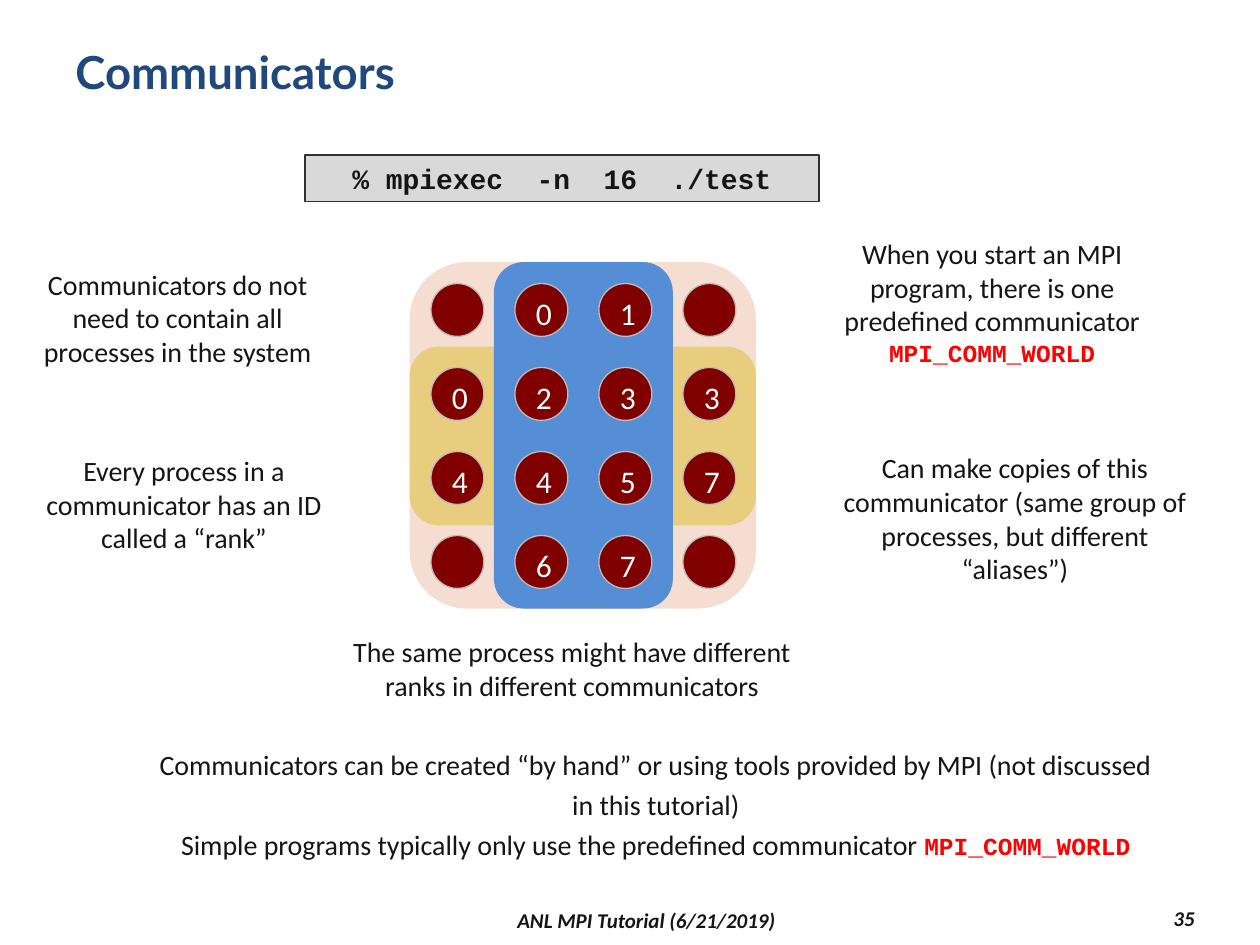
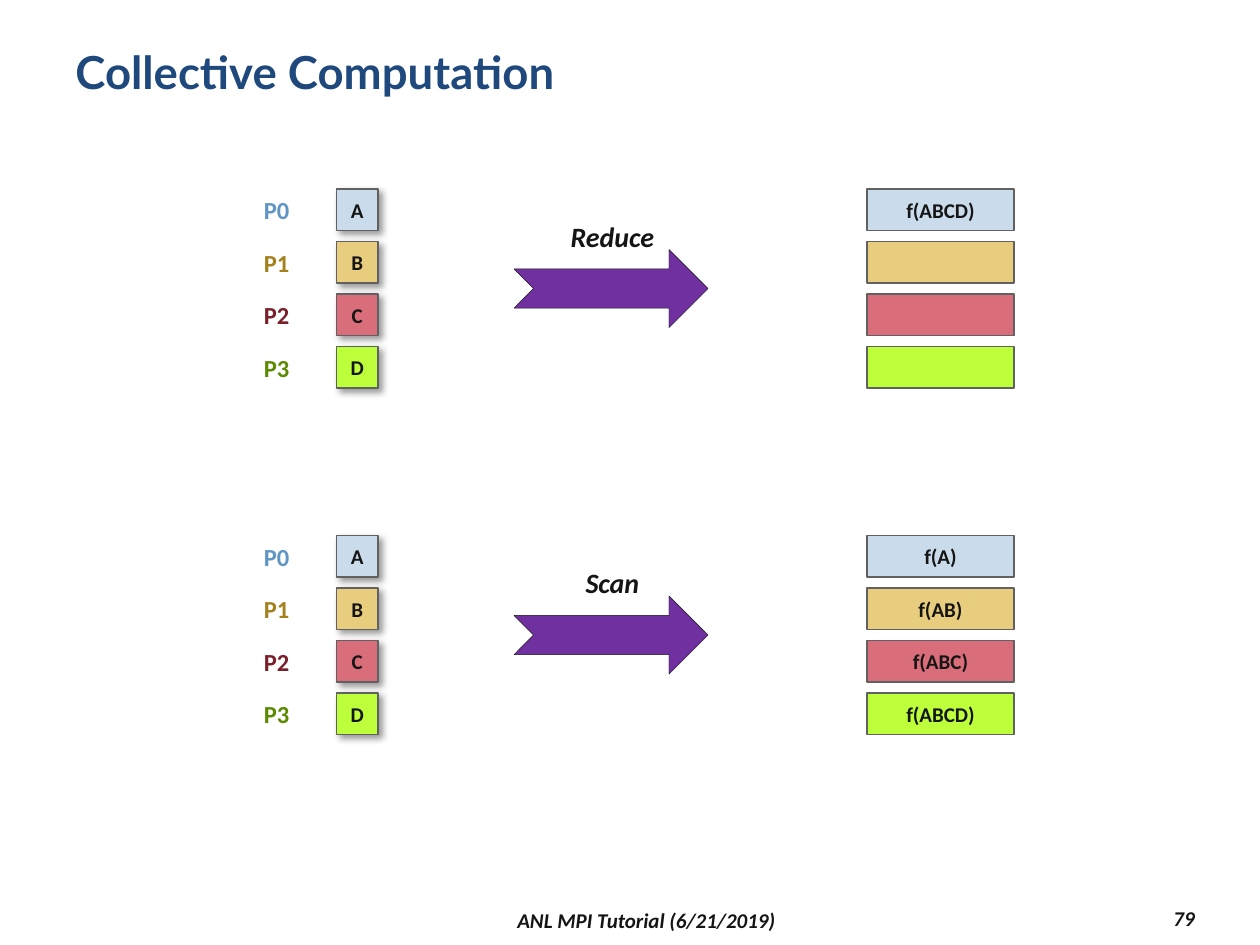
from pptx import Presentation
from pptx.dml.color import RGBColor
from pptx.enum.shapes import MSO_SHAPE
from pptx.enum.text import MSO_ANCHOR, MSO_AUTO_SIZE, PP_ALIGN
from pptx.oxml import parse_xml
from pptx.oxml.ns import nsdecls, qn
from pptx.util import Inches, Pt

RECT, ROUND = MSO_SHAPE.RECTANGLE, MSO_SHAPE.ROUNDED_RECTANGLE
OVAL, ARROW = MSO_SHAPE.OVAL, MSO_SHAPE.NOTCHED_RIGHT_ARROW
TOP, MID = MSO_ANCHOR.TOP, MSO_ANCHOR.MIDDLE
LEFT, MIDDLE, RIGHT = PP_ALIGN.LEFT, PP_ALIGN.CENTER, PP_ALIGN.RIGHT
GROW = MSO_AUTO_SIZE.SHAPE_TO_FIT_TEXT

COLORS = {
    "ink": "151515", "title": "1F497D", "white": "FFFFFF", "red": "FF0000",
    "pink": "F5DDD1", "gold": "E8CD7E", "blue": "558ED5", "maroon": "800000",
    "ring": "BDBDBD", "gray": "D9D9D9", "edge": "303030", "frame": "616161",
    "sky": "CADCEB", "rose": "D96E7A", "lime": "BDFF3B", "purple": "7030A0",
    "p0": "5F95C4", "p1": "A3811D", "p2": "7A202A", "p3": "5C8A00",
}

# name: font, size, colour, bold, italic
STYLES = {
    "title": ("Lato", 26, "title", True, False),
    "foot": ("Calibri", 12, "ink", True, True),
    "body": ("Calibri", 16, "ink", False, False),
    "const": ("Courier New", 14, "red", True, False),
    "code": ("Courier New", 16, "ink", True, False),
    "rank": ("Calibri", 18, "white", False, False),
    "cell": ("Calibri", 12, "ink", True, False),
    "verb": ("Calibri", 16, "ink", True, True),
    **{f"p{i}": ("Calibri", 14, f"p{i}", True, False) for i in range(4)},
}

WORLD = ("MPI_COMM_WORLD", "const")


def color(name):
    return RGBColor.from_string(COLORS[name])


class Deck:
    def __init__(self):
        self.prs = Presentation()
        self.prs.slide_width, self.prs.slide_height = Inches(10), Inches(7.5)
        self.slide = None

    def page(self, title, number):
        """Start a slide with the shared title and footer."""
        self.slide = self.prs.slides.add_slide(self.prs.slide_layouts[6])
        self.text((0.5, 0.3, 9, 0.87), [[(title, "title")]], align=LEFT)
        self.text((2.17, 7.17, 5.92, 0.27),
                  [[("ANL MPI Tutorial (6/21/2019)", "foot")]], anchor=MID)
        self.text((8.5, 7.15, 1.08, 0.27), [[(number, "foot")]],
                  align=RIGHT, anchor=MID)

    def label(self, shape, paras, align=MIDDLE, anchor=TOP, wrap=True,
              space=None):
        """Fill a shape with paragraphs, each a list of (text, style) runs."""
        frame = shape.text_frame
        frame.word_wrap, frame.vertical_anchor = wrap, anchor
        for i, runs in enumerate(paras):
            para = frame.add_paragraph() if i else frame.paragraphs[0]
            para.alignment = align
            if space:
                para.line_spacing = space
            for text, style in runs:
                run = para.add_run()
                run.text = text
                font = run.font
                font.name, size, tint, font.bold, font.italic = STYLES[style]
                font.size = Pt(size)
                font.color.rgb = color(tint)

    def text(self, box, paras, grow=False, **opts):
        shape = self.slide.shapes.add_textbox(*map(Inches, box))
        self.label(shape, paras, **opts)
        if grow:
            shape.text_frame.auto_size = GROW

    def shape(self, kind, box, fill, line=None, width=0.75):
        shape = self.slide.shapes.add_shape(kind, *map(Inches, box))
        shape.shadow.inherit = False
        shape.fill.solid()
        shape.fill.fore_color.rgb = color(fill)
        if line:
            shape.line.color.rgb = color(line)
            shape.line.width = Pt(width)
        else:
            shape.line.fill.background()
        return shape

    def disc(self, left, top, rank):
        shape = self.shape(OVAL, (left, top, 0.42, 0.42), "maroon", "ring")
        if rank:
            frame = shape.text_frame
            frame.margin_left = frame.margin_top = Inches(0.04)
            frame.margin_right = frame.margin_bottom = 0
            self.label(shape, [[(rank, "rank")]], anchor=MID, wrap=False)

    def cell(self, box, fill, label, shade=False):
        shape = self.shape(RECT, box, fill, "frame", 1)
        if label:
            self.label(shape, [[(label, "cell")]], anchor=MID, wrap=False)
        if shade:
            shape.element.spPr.find(qn("a:effectLst")).append(parse_xml(
                f'<a:outerShdw {nsdecls("a")} blurRad="{Pt(4)}" '
                f'dist="{Pt(3)}" dir="2700000" algn="tl" rotWithShape="0">'
                '<a:srgbClr val="000000"><a:alpha val="40000"/></a:srgbClr>'
                '</a:outerShdw>'))


def groups(deck):
    deck.page("Communicators", "35")
    for box, fill in [((3.25, 2.08, 2.75, 2.75), "pink"),
                      ((3.25, 2.75, 2.75, 1.42), "gold"),
                      ((3.92, 2.08, 1.42, 2.75), "blue")]:
        deck.shape(ROUND, box, fill)

    ranks = [("", "0", "1", ""), ("0", "2", "3", "3"),
             ("4", "4", "5", "7"), ("", "6", "7", "")]
    step = 2 / 3
    for row, line in enumerate(ranks):
        for col, rank in enumerate(line):
            deck.disc(3.42 + col * step, 2.25 + row * step, rank)

    notes = [
        ((6.5, 1.83, 2.75, 1.18),
         [("When you start an MPI program, there is one predefined "
           "communicator ", "body"), WORLD]),
        ((6.5, 3.53, 3.11, 1.18),
         [("Can make copies of this communicator (same group of processes, "
           "but different “aliases”)", "body")]),
        ((0.12, 2.07, 2.58, 0.91),
         [("Communicators do not need to contain all processes in the "
           "system", "body")]),
        ((0.17, 3.55, 2.58, 0.91),
         [("Every process in a communicator has an ID called a “rank”",
           "body")]),
        ((2.5, 4.99, 4.08, 0.64),
         [("The same process might have different ranks in different "
           "communicators", "body")]),
    ]
    for box, runs in notes:
        deck.text(box, [runs], grow=True)

    deck.text((1.1, 5.83, 8.21, 1.07), [
        [("Communicators can be created “by hand” or using tools provided "
          "by MPI (not discussed in this tutorial)", "body")],
        [("Simple programs typically only use the predefined communicator ",
          "body"), WORLD],
    ], grow=True, space=1.2)

    shell = deck.shape(RECT, (2.42, 1.23, 4.08, 0.37), "gray", "edge")
    deck.label(shell, [[("% mpiexec  -n  16  ./test", "code")]])


def flow(deck, top, verb, width, results):
    """Draw four processes, the arrow and what each process ends up with."""
    step = 1.25 / 3
    fills = ("sky", "gold", "rose", "lime")
    for i, (fill, data, result) in enumerate(zip(fills, "ABCD", results)):
        y = top + i * step
        deck.text((1.99, y, 0.41, 0.34), [[(f"P{i}", f"p{i}")]],
                  grow=True, wrap=False)
        deck.cell((2.67, y, 0.33, 0.33), fill, data, shade=True)
        deck.cell((6.88, y, 1.17, 0.33), fill, result)
    deck.text((4.86 - width / 2, top + 0.19, width, 0.37), [[(verb, "verb")]],
              grow=True, wrap=False)
    deck.shape(ARROW, (4.08, top + 0.48, 1.54, 0.62), "purple", "ink", 0.25)


def collect(deck):
    deck.page("Collective Computation", "79")
    flow(deck, 1.5, "Reduce", 0.88, ("f(ABCD)", "", "", ""))
    flow(deck, 4.25, "Scan", 0.64, ("f(A)", "f(AB)", "f(ABC)", "f(ABCD)"))


def main():
    deck = Deck()
    groups(deck)
    collect(deck)
    deck.prs.save("out.pptx")


if __name__ == "__main__":
    main()
